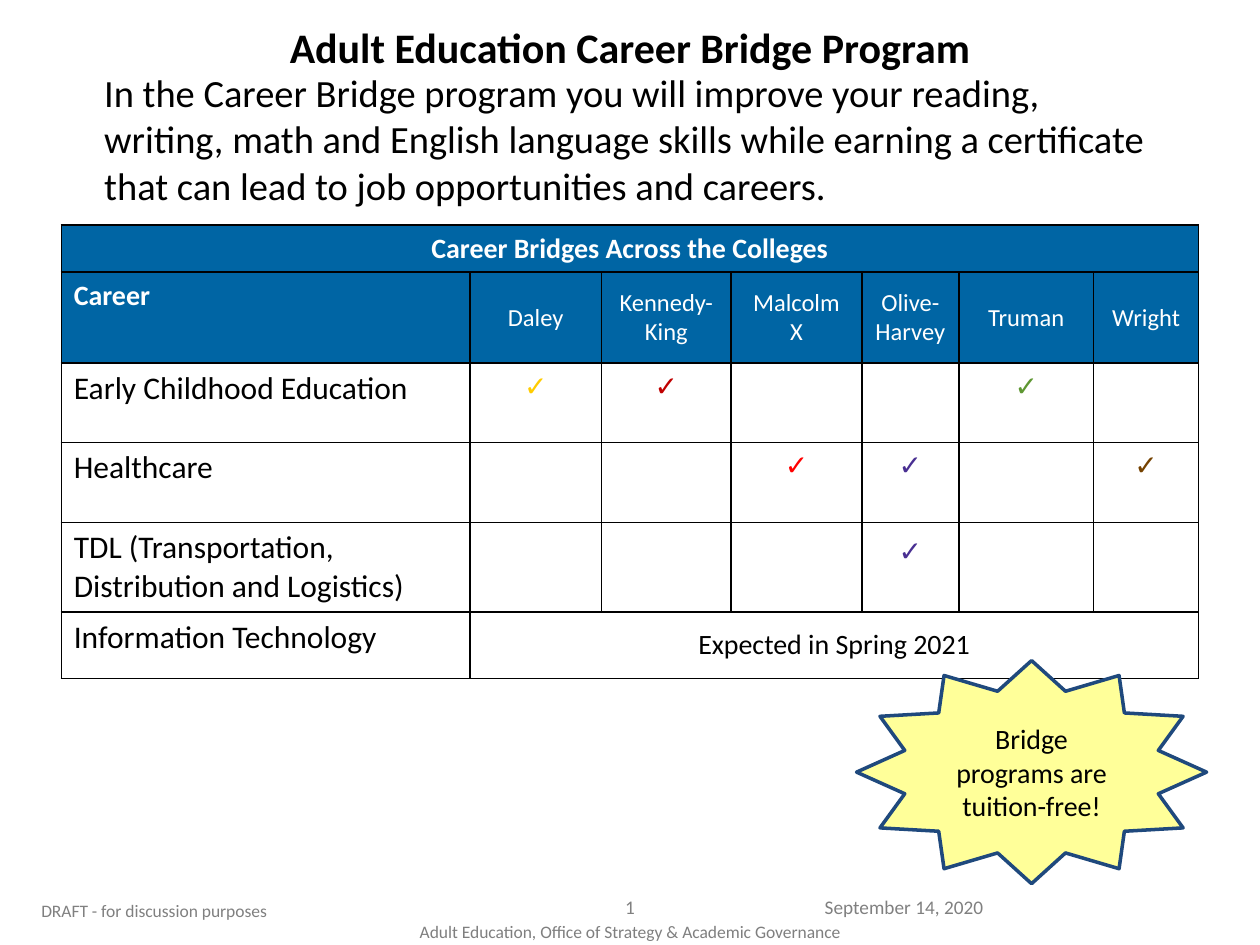
from dataclasses import dataclass

from lxml import etree
from pptx import Presentation
from pptx.dml.color import RGBColor
from pptx.enum.shapes import MSO_SHAPE
from pptx.enum.text import MSO_ANCHOR, PP_ALIGN
from pptx.oxml.ns import qn
from pptx.util import Pt

STAR = MSO_SHAPE.STAR_12_POINT
TOP, MID = MSO_ANCHOR.TOP, MSO_ANCHOR.MIDDLE
LEFT, CENTER, RIGHT = PP_ALIGN.LEFT, PP_ALIGN.CENTER, PP_ALIGN.RIGHT

BLACK = RGBColor(0x00, 0x00, 0x00)
WHITE = RGBColor(0xFF, 0xFF, 0xFF)
GRAY = RGBColor(0x80, 0x80, 0x80)
SLATE = RGBColor(0x7F, 0x7F, 0x7F)
BLUE = RGBColor(0x00, 0x65, 0xA4)
NAVY = RGBColor(0x1F, 0x49, 0x7D)
CREAM = RGBColor(0xFF, 0xFF, 0x99)
GOLD = RGBColor(0xFF, 0xCC, 0x00)
CRIMSON = RGBColor(0xC0, 0x00, 0x00)
GREEN = RGBColor(0x5E, 0x97, 0x32)
RED = RGBColor(0xFF, 0x00, 0x00)
PURPLE = RGBColor(0x49, 0x2F, 0x92)
BROWN = RGBColor(0x75, 0x42, 0x00)

FONT = "Calibri"
TICK = "✓"


@dataclass(frozen=True)
class Style:
    size: float
    color: RGBColor = BLACK
    bold: bool = False
    align: PP_ALIGN = LEFT
    anchor: MSO_ANCHOR = TOP


@dataclass(frozen=True)
class Label:
    text: str
    box: tuple[float, float, float, float]
    style: Style
    inset: bool = True


@dataclass(frozen=True)
class Mark:
    row: int
    col: int
    color: RGBColor


LABELS = [
    Label("Adult Education, Office of Strategy & Academic Governance",
          (180, 522.5, 360, 19.5), Style(10, SLATE, align=CENTER)),
    Label("1", (324, 511, 72, 14.5), Style(11, GRAY, align=CENTER, anchor=MID)),
    Label("DRAFT - for discussion purposes", (16.5, 511, 228, 14.5), Style(10, GRAY)),
    Label("September 14, 2020", (401, 511, 168, 14.5),
          Style(11, GRAY, align=RIGHT, anchor=MID)),
    Label("Adult Education Career Bridge Program", (16.5, 12.5, 687, 29),
          Style(24, bold=True, align=CENTER), inset=False),
    Label("In the Career Bridge program you will improve your reading, writing, "
          "math and English language skills while earning a certificate that can "
          "lead to job opportunities and careers.",
          (52.5, 36, 615, 90), Style(22)),
]

WIDTHS = [233.5, 75.3, 74, 74.7, 55.5, 77, 60]
HEIGHTS = [27, 52, 45.5, 45.5, 50.5, 38]
SCHOOLS = ["Daley", "Kennedy-King", "Malcolm\nX", "Olive-Harvey", "Truman", "Wright"]
CAREERS = ["Early Childhood Education", "Healthcare",
           "TDL (Transportation, Distribution and Logistics)", "Information Technology"]
MARKS = [
    Mark(2, 1, GOLD), Mark(2, 2, CRIMSON), Mark(2, 5, GREEN),
    Mark(3, 3, RED), Mark(3, 4, PURPLE), Mark(3, 6, BROWN),
    Mark(4, 4, PURPLE),
]


def put_text(frame, text: str, style: Style) -> None:
    frame.text = text
    frame.word_wrap = True
    frame.vertical_anchor = style.anchor
    for para in frame.paragraphs:
        para.alignment = style.align
        for run in para.runs:
            run.font.name = FONT
            run.font.size = Pt(style.size)
            run.font.bold = style.bold
            run.font.color.rgb = style.color


def add_label(slide, label: Label) -> None:
    frame = slide.shapes.add_textbox(*map(Pt, label.box)).text_frame
    if not label.inset:
        frame.margin_left = frame.margin_right = Pt(0)
        frame.margin_top = frame.margin_bottom = Pt(0)
    put_text(frame, label.text, label.style)


def fill_cell(cell, color: RGBColor) -> None:
    props = cell._tc.get_or_add_tcPr()
    for side in ("a:lnL", "a:lnR", "a:lnT", "a:lnB"):
        line = etree.SubElement(props, qn(side), w=str(Pt(1)))
        solid = etree.SubElement(line, qn("a:solidFill"))
        etree.SubElement(solid, qn("a:srgbClr"), val=str(BLACK))
    cell.fill.solid()
    cell.fill.fore_color.rgb = color


def add_grid(slide) -> None:
    frame = slide.shapes.add_table(
        len(HEIGHTS), len(WIDTHS), Pt(35), Pt(128.5),
        Pt(sum(WIDTHS)), Pt(sum(HEIGHTS)))
    table = frame.table
    table.first_row = table.horz_banding = False
    for col, width in zip(table.columns, WIDTHS):
        col.width = Pt(width)
    for index, (row, height) in enumerate(zip(table.rows, HEIGHTS)):
        row.height = Pt(height)
        for cell in row.cells:
            fill_cell(cell, BLUE if index < 2 else WHITE)

    def write(row: int, col: int, text: str, style: Style) -> None:
        cell = table.cell(row, col)
        put_text(cell.text_frame, text, style)
        cell.vertical_anchor = style.anchor

    last = len(HEIGHTS) - 1
    table.cell(0, 0).merge(table.cell(0, len(WIDTHS) - 1))
    table.cell(last, 1).merge(table.cell(last, len(WIDTHS) - 1))
    write(0, 0, "Career Bridges Across the Colleges", Style(16, WHITE, True, CENTER, MID))
    write(1, 0, "Career", Style(16, WHITE, True))
    for col, school in enumerate(SCHOOLS, 1):
        write(1, col, school, Style(14, WHITE, align=CENTER, anchor=MID))
    for row, career in enumerate(CAREERS, 2):
        write(row, 0, career, Style(18))
    for mark in MARKS:
        write(mark.row, mark.col, TICK, Style(16, mark.color, True, CENTER))
    table.cell(4, 4).margin_top = Pt(7)
    write(last, 1, "Expected in Spring 2021", Style(16, align=CENTER, anchor=MID))


def add_star(slide) -> None:
    star = slide.shapes.add_shape(STAR, Pt(489.5), Pt(377.5), Pt(200), Pt(127.5))
    star.shadow.inherit = False
    star.fill.solid()
    star.fill.fore_color.rgb = CREAM
    star.line.color.rgb = NAVY
    star.line.width = Pt(2)
    put_text(star.text_frame, "Bridge programs are tuition-free!",
             Style(16, align=CENTER, anchor=MID))


def main() -> None:
    deck = Presentation()
    deck.slide_width, deck.slide_height = Pt(720), Pt(540)
    slide = deck.slides.add_slide(deck.slide_layouts[6])
    add_grid(slide)
    for label in LABELS:
        add_label(slide, label)
    add_star(slide)
    deck.save("out.pptx")


if __name__ == "__main__":
    main()
